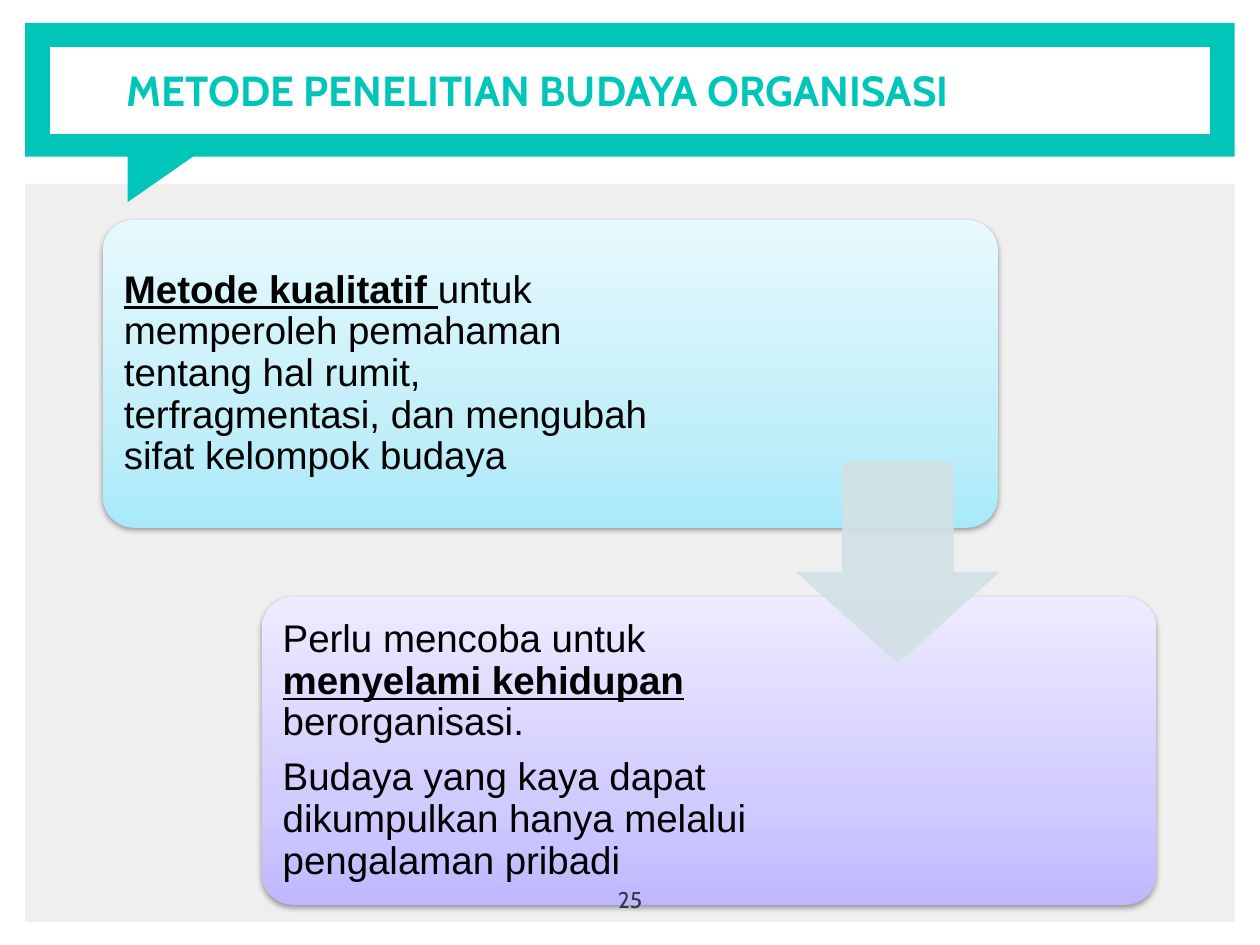
from pptx import Presentation
from pptx.dml.color import RGBColor as Rgb
from pptx.enum.shapes import MSO_SHAPE as Kind
from pptx.enum.text import MSO_ANCHOR as Anchor, PP_ALIGN as Align
from pptx.oxml import parse_xml
from pptx.oxml.ns import nsdecls, qn
from pptx.util import Cm, Pt

INK = {"teal": "00C5B9", "white": "FFFFFF", "grey": "EFEFEF",
       "black": "000000", "slate": "2F3848", "arrow": "D1E1E5"}

deck = Presentation()
deck.slide_width, deck.slide_height = Cm(25.4), Cm(19.05)
slide = deck.slides.add_slide(deck.slide_layouts[6])


def add_form(kind, box, color):
    form = slide.shapes.add_shape(kind, *map(Cm, box))
    form.shadow.inherit = False
    form.fill.solid()
    form.fill.fore_color.rgb = Rgb.from_string(INK[color])
    form.line.fill.background()
    return form


def add_text(box, paras, size, font, color, inset, anchor=Anchor.MIDDLE):
    """Each paragraph is a list of (text, strong) runs."""
    frame = slide.shapes.add_textbox(*map(Cm, box)).text_frame
    frame.word_wrap = True
    frame.vertical_anchor = anchor
    frame.margin_left = frame.margin_right = Cm(inset)
    frame.margin_top = frame.margin_bottom = Cm(inset)
    for i, runs in enumerate(paras):
        para = frame.add_paragraph() if i else frame.paragraphs[0]
        para.font.size, para.font.name = Pt(size), font
        para.font.color.rgb = Rgb.from_string(INK[color])
        for words, strong in runs:
            run = para.add_run()
            run.text = words
            if strong:
                run.font.bold = run.font.underline = True
    return frame.paragraphs


# Backdrop and title banner
add_form(Kind.RECTANGLE, (0.51, 3.71, 24.38, 14.88), "grey")
add_form(Kind.RECTANGLE, (0.51, 0.46, 24.38, 2.7), "teal")
tail = add_form(Kind.RIGHT_TRIANGLE, (2.84, 2.59, 1.22, 1.75), "teal")
tail.rotation = 90
add_form(Kind.RECTANGLE, (1.01, 0.95, 23.38, 1.75), "white")
title = add_text((2.31, 0.46, 22.1, 2.7),
                 [[("METODE PENELITIAN BUDAYA ORGANISASI", False)]],
                 24, "Cabin", "teal", 0.25)
title[0].font.bold = True

# Two cards: left, top, text width, gradient from bottom to top, text
cards = [
    (2.08, 4.44, 11.6, ("A9E9F9", "C3EFF9", "E7F9FE"),
     [[("Metode kualitatif ", True),
       ("untuk memperoleh pemahaman tentang hal rumit, terfragmentasi, "
        "dan mengubah sifat kelompok budaya", False)]]),
    (5.28, 12.04, 10.44, ("BFB8FF", "D1CCFF", "EDEBFF"),
     [[("Perlu mencoba untuk ", False), ("menyelami kehidupan ", True),
       ("berorganisasi.", False)],
      [("Budaya yang kaya dapat dikumpulkan hanya melalui "
        "pengalaman pribadi", False)]]),
]
for left, top, width, tones, paras in cards:
    card = add_form(Kind.ROUNDED_RECTANGLE, (left, top, 18.03, 6.2), "white")
    card.adjustments[0] = 0.1
    props = card._element.spPr
    # Three-stop gradient and soft shadow
    stops = "".join(f'<a:gs pos="{pos}"><a:srgbClr val="{tone}"/></a:gs>'
                    for pos, tone in zip((0, 35000, 100000), tones))
    props.replace(props.find(qn("a:solidFill")), parse_xml(
        f'<a:gradFill {nsdecls("a")} rotWithShape="1"><a:gsLst>{stops}</a:gsLst>'
        '<a:lin ang="16200000" scaled="0"/></a:gradFill>'))
    props.find(qn("a:effectLst")).append(parse_xml(
        f'<a:outerShdw {nsdecls("a")} blurRad="40000" dist="20000" '
        'dir="5400000" rotWithShape="0"><a:srgbClr val="000000">'
        '<a:alpha val="38000"/></a:srgbClr></a:outerShdw>'))
    for para in add_text((left + 0.19, top + 0.18, width, 5.84), paras,
                         22, "Arial", "black", 0.23):
        para.line_spacing = 0.9
        para.space_after = Pt(7.7)

# Arrow from the first card to the second
arrow = add_form(Kind.DOWN_ARROW, (16.08, 9.32, 4.04, 4.04), "arrow")
arrow.adjustments[0], arrow.adjustments[1] = 0.55, 0.45
arrow.line.color.rgb = Rgb.from_string(INK["arrow"])
arrow.line.width = Pt(0.75)
for tint in arrow._element.spPr.iter(qn("a:srgbClr")):
    tint.append(parse_xml(f'<a:alpha {nsdecls("a")} val="90000"/>'))

# Page number
page = add_text((11.94, 17.6, 1.52, 1.45), [[("25", False)]],
                13, "Cabin", "slate", 0.25, Anchor.TOP)
page[0].alignment = Align.CENTER

deck.save("out.pptx")
